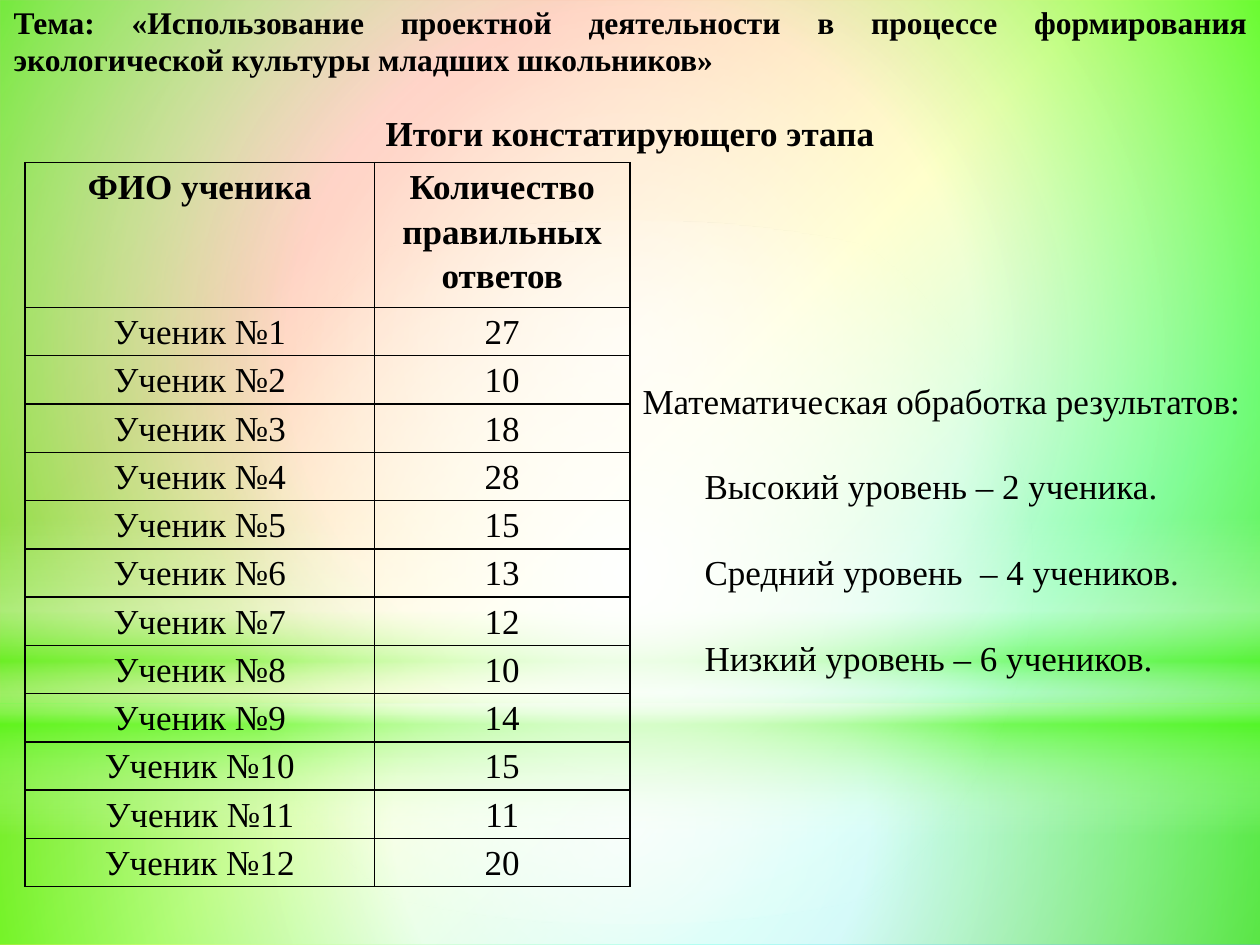
from lxml import etree
from pptx import Presentation
from pptx.dml.color import RGBColor
from pptx.enum.shapes import MSO_SHAPE
from pptx.enum.text import MSO_ANCHOR, MSO_AUTO_SIZE, PP_ALIGN
from pptx.oxml.ns import qn
from pptx.util import Pt

BLACK = RGBColor(0x00, 0x00, 0x00)
WHITE = RGBColor(0xFF, 0xFF, 0xFF)
GREEN = RGBColor(0x52, 0xFA, 0x16)
PINK = RGBColor(0xFF, 0xAD, 0xD6)
ORANGE = RGBColor(0xFF, 0x8B, 0x64)
YELLOW = RGBColor(0xFF, 0xFF, 0x75)
TURQUOISE = RGBColor(0x41, 0xFE, 0xE2)
BLUE = RGBColor(0x78, 0x9A, 0xFF)


def paint_gradient(fill, owner, stops, angle=None):
    """Fill with (position %, colour, opacity %) stops; circular without an angle."""
    fill.gradient()
    gradient = next(owner.iter(qn("a:gradFill")))
    gradient.clear()
    gradient.set("rotWithShape", "1")
    stop_list = etree.SubElement(gradient, qn("a:gsLst"))
    for position, color, opacity in stops:
        stop = etree.SubElement(stop_list, qn("a:gs"), pos=str(position * 1000))
        rgb = etree.SubElement(stop, qn("a:srgbClr"), val=str(color))
        if opacity < 100:
            etree.SubElement(rgb, qn("a:alpha"), val=str(opacity * 1000))
    if angle is None:
        circle = etree.SubElement(gradient, qn("a:path"), path="circle")
        etree.SubElement(circle, qn("a:fillToRect"), l="50000", t="50000", r="50000", b="50000")
    else:
        etree.SubElement(gradient, qn("a:lin"), ang=str(angle * 60000), scaled="0")


def add_text(paragraph, text, size, bold=False, align=PP_ALIGN.LEFT, spacing=1.0):
    paragraph.alignment = align
    paragraph.line_spacing = spacing
    run = paragraph.add_run()
    run.text = text
    run.font.name = "Times New Roman"
    run.font.size = Pt(size)
    run.font.bold = bold
    run.font.color.rgb = BLACK


prs = Presentation()
prs.slide_width, prs.slide_height = Pt(720), Pt(540)
slide = prs.slides.add_slide(prs.slide_layouts[1])

# Master background and its translucent layers
master = prs.slide_master
paint_gradient(master.background.fill, master.element,
               [(0, PINK, 29), (25, ORANGE, 100), (50, YELLOW, 100),
                (75, TURQUOISE, 100), (100, BLUE, 100)], 45)
layers = [
    (MSO_SHAPE.RECTANGLE, 402, 138, [(0, WHITE, 91), (37, WHITE, 76), (100, GREEN, 79)], None),
    (MSO_SHAPE.RECTANGLE, 0, 402, [(0, WHITE, 89), (48, WHITE, 62), (100, GREEN, 79)], None),
    (MSO_SHAPE.RECTANGLE, 296.6, 180,
     [(0, WHITE, 0), (29, WHITE, 30), (45, GREEN, 40), (55, WHITE, 26),
      (65, GREEN, 60), (100, WHITE, 0)], 90),
    (MSO_SHAPE.OVAL, 126, 402, [(0, WHITE, 100), (56, WHITE, 0)], None),
]
for index, (kind, top, height, stops, angle) in enumerate(layers):
    layer = slide.shapes.add_shape(kind, 0, Pt(top), Pt(720), Pt(height))
    layer.shadow.inherit = False
    layer.line.fill.background()
    paint_gradient(layer.fill, layer.element, stops, angle)
    master.shapes.element.insert(2 + index, layer.element)

# Heading
heading = slide.shapes.title
heading.left, heading.top, heading.width, heading.height = Pt(0), Pt(48.2), Pt(720), Pt(66)
heading.text_frame.auto_size = MSO_AUTO_SIZE.NONE
heading.text_frame.vertical_anchor = MSO_ANCHOR.TOP
add_text(heading.text_frame.paragraphs[0], "Итоги констатирующего этапа", 20, True,
         PP_ALIGN.CENTER, 1.5)

# Scores of the pupils
scores = [27, 10, 18, 28, 15, 13, 12, 10, 14, 15, 11, 20]
rows = [("ФИО ученика", "Количество правильных ответов")]
rows += [(f"Ученик №{number}", str(score)) for number, score in enumerate(scores, 1)]
score_table = slide.shapes.add_table(len(rows), 2, Pt(14.4), Pt(92.9), Pt(345.6), Pt(414)).table
score_table.horz_banding = False
score_table.columns[0].width, score_table.columns[1].width = Pt(199.6), Pt(146)
for row_index, row in enumerate(rows):
    score_table.rows[row_index].height = Pt(27.6 if row_index else 82.8)
    for column_index, text in enumerate(row):
        cell = score_table.cell(row_index, column_index)
        cell.margin_left = cell.margin_right = Pt(5)
        cell.margin_top = cell.margin_bottom = 0
        add_text(cell.text_frame.paragraphs[0], text, 20, row_index == 0, PP_ALIGN.CENTER, 1.15)
        cell.fill.background()
        properties = cell._tc.get_or_add_tcPr()
        for index, side in enumerate(("a:lnL", "a:lnR", "a:lnT", "a:lnB")):
            border = etree.Element(qn(side), w=str(Pt(1)))
            solid = etree.SubElement(border, qn("a:solidFill"))
            etree.SubElement(solid, qn("a:srgbClr"), val=str(BLACK))
            properties.insert(index, border)

# Levels reached
levels = slide.placeholders[1]
levels.left, levels.top, levels.width, levels.height = Pt(360), Pt(213), Pt(360), Pt(177)
levels.text_frame.auto_size = MSO_AUTO_SIZE.NONE
for index, text in enumerate(["Математическая обработка результатов:",
                              "Высокий уровень – 2 ученика.",
                              "Средний уровень  – 4 учеников.",
                              "Низкий уровень – 6 учеников."]):
    paragraph = levels.text_frame.paragraphs[0] if index == 0 else levels.text_frame.add_paragraph()
    properties = paragraph._p.get_or_add_pPr()
    properties.set("marL", "0")
    properties.set("indent", str(Pt(35.4) if index else 0))
    etree.SubElement(properties, qn("a:buNone"))
    paragraph.space_before = Pt(25 if index else 0)
    add_text(paragraph, text, 20)

# Topic
topic = slide.shapes.add_textbox(Pt(0.7), Pt(-2), Pt(719.3), Pt(51))
topic.text_frame.word_wrap = True
add_text(topic.text_frame.paragraphs[0],
         "Тема: «Использование проектной деятельности в процессе формирования "
         "экологической культуры младших школьников»", 18, True, PP_ALIGN.JUSTIFY)

prs.save("out.pptx")
